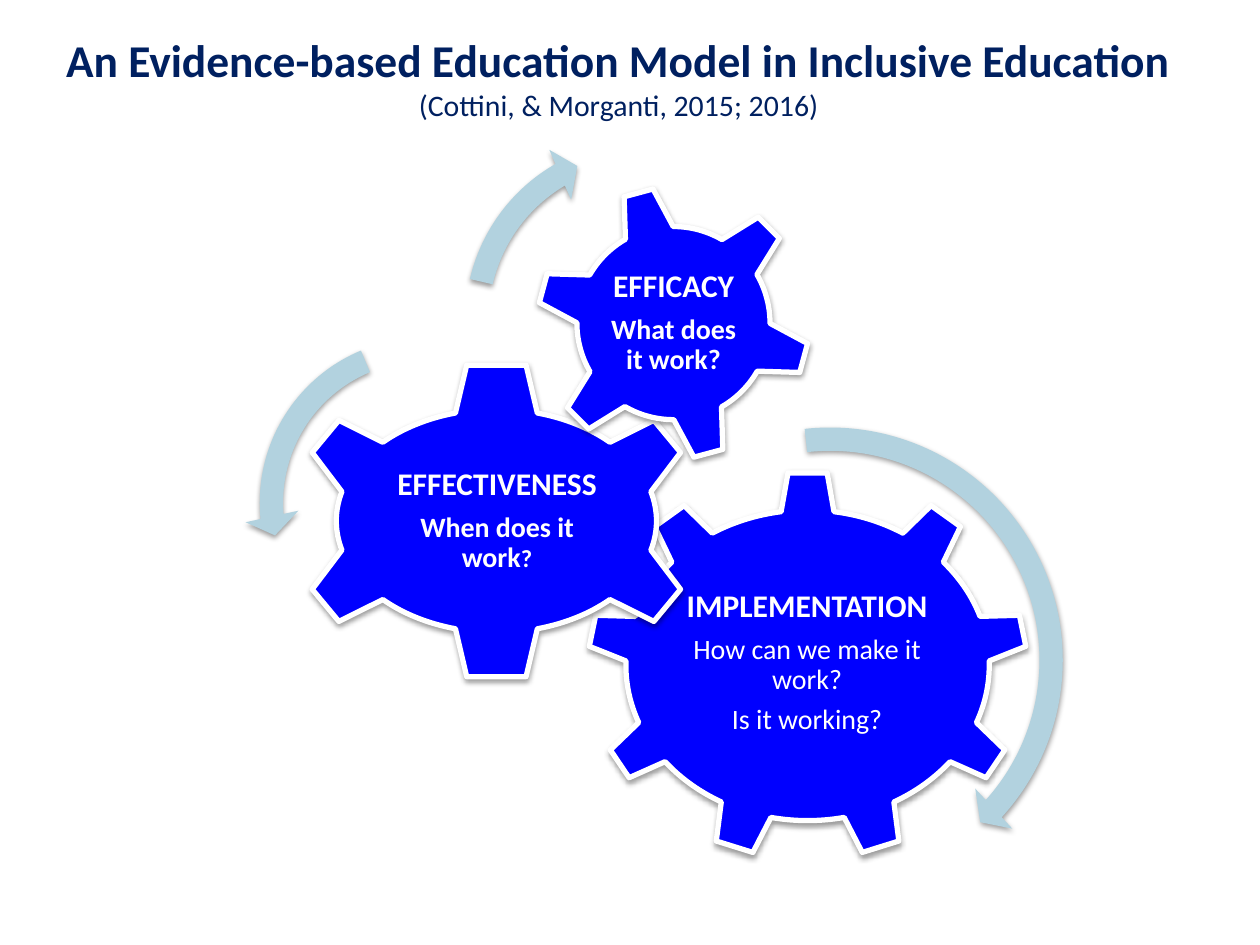
"""Build the slide with three linked gears on evidence-based education."""
from lxml import etree
from pptx import Presentation
from pptx.dml.color import RGBColor
from pptx.enum.shapes import MSO_SHAPE
from pptx.enum.text import MSO_ANCHOR, PP_ALIGN
from pptx.oxml.ns import qn
from pptx.util import Pt

GEAR6, GEAR9 = MSO_SHAPE.GEAR_6, MSO_SHAPE.GEAR_9
RIGHT, LEFT = MSO_SHAPE.CIRCULAR_ARROW, MSO_SHAPE.LEFT_CIRCULAR_ARROW
MIDDLE, CENTER = MSO_ANCHOR.MIDDLE, PP_ALIGN.CENTER

THEME = {
    "font": "Calibri", "navy": "002060", "blue": "0000FF", "pale": "B2D2DF",
    "white": "FFFFFF", "black": "000000",
    "title": 26, "cite": 17, "head": 18, "body": 16, "small": 14,
}


def add_text(box, paras, color, inset, form):
    frame = slide.shapes.add_textbox(*map(Pt, box)).text_frame
    layout = {"word_wrap": True, "vertical_anchor": MIDDLE}
    for side, gap in zip(("left", "top", "right", "bottom"), inset):
        layout[f"margin_{side}"] = Pt(gap)
    for name, value in layout.items():
        setattr(frame, name, value)
    for i, runs in enumerate(paras):
        para = frame.add_paragraph() if i else frame.paragraphs[0]
        after = Pt(round(form["after"] * THEME[runs[0][1]], 2))
        look = {"alignment": CENTER, "line_spacing": form["line"], "space_after": after}
        for name, value in look.items():
            setattr(para, name, value)
        for text, size, bold in runs:
            run = para.add_run()
            run.text = text
            look = {"name": THEME["font"], "size": Pt(THEME[size]), "bold": bold}
            for name, value in look.items():
                setattr(run.font, name, value)
            run.font.color.rgb = RGBColor.from_string(THEME[color])


def add_part(kind, box, turn, color):
    part = slide.shapes.add_shape(kind, *map(Pt, box))
    part.rotation = turn
    part.fill.solid()
    part.fill.fore_color.rgb = RGBColor.from_string(THEME[color])
    part.line.fill.background()
    part.shadow.inherit = False
    effects = part._element.spPr.find(qn("a:effectLst"))
    shade = etree.SubElement(effects, qn("a:outerShdw"), blurRad=str(Pt(3.1)),
                             dist=str(Pt(1.6)), dir="5400000", rotWithShape="0")
    tone = etree.SubElement(shade, qn("a:srgbClr"), val=THEME["black"])
    etree.SubElement(tone, qn("a:alpha"), val="38000")
    return part


deck = Presentation()
deck.slide_width, deck.slide_height = Pt(720), Pt(540)
slide = deck.slides.add_slide(deck.slide_layouts[6])

title = [
    [("An Evidence-based Education Model in Inclusive Education", "title", True)],
    [("(Cottini, & Morganti, 2015; 2016)", "cite", False)],
]
add_text((20.2, -0.7, 666.7, 89.3), title, "navy", (7.2, 3.6, 7.2, 3.6),
         {"line": 1.0, "after": 0})

gears = [
    (GEAR9, (335.5, 269.3, 252, 221.8), 0, (383.8, 321.8, 154.8, 113.8), [
        [("IMPLEMENTATION", "head", True)],
        [("How can we make it work?", "body", False)],
        [("Is it working?", "body", False)]]),
    (GEAR6, (164.9, 206.6, 237.6, 182.2), 0, (218.9, 252.7, 130.3, 90), [
        [("EFFECTIVENESS", "head", True)],
        [("When does it work", "body", True), ("?", "small", True)]]),
    (GEAR6, (306, 105.8, 157.7, 157.7), 345, (340.6, 140.4, 88.6, 88.6), [
        [("EFFICACY", "head", True)],
        [("What does it work?", "body", True)]]),
]
for kind, box, turn, area, paras in gears:
    gear = add_part(kind, box, turn, "blue")
    gear.line.color.rgb = RGBColor.from_string(THEME["white"])
    gear.line.width = Pt(3)
    add_text(area, paras, "white", (2.2,) * 4, {"line": 0.9, "after": 0.35})

arrows = [
    (RIGHT, 332.6, 235.4, 283.7, 0, (4.7, 4.98, 42.24, 263.7, 5.5)),
    (LEFT, 139.7, 184.3, 205.9, 0, (6.5, 7.17, 174.82, 247.3, 7.5)),
    (RIGHT, 257, 71.3, 222.5, 17.9, (6, 6.57, 221.9, 175.14, 7)),
]
for kind, x, y, size, turn, (width, tip, end, start, head) in arrows:
    arrow = add_part(kind, (x, y, size, size), turn, "pale")
    values = (width / 100, tip * 0.6, end * 0.6, start * 0.6, head / 100)
    for i, value in enumerate(values):
        arrow.adjustments[i] = value

deck.save("out.pptx")
